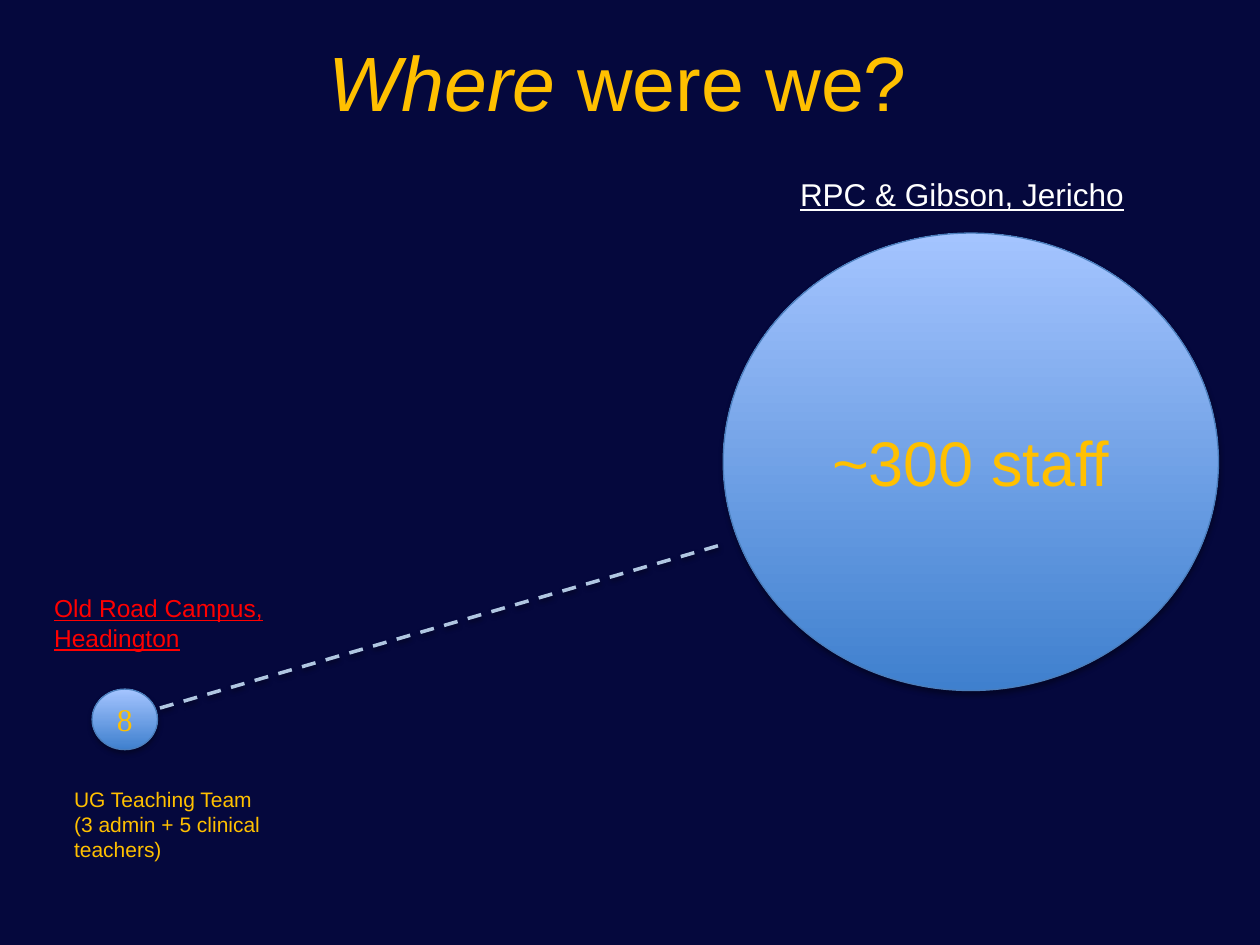
from lxml import etree
from pptx import Presentation
from pptx.dml.color import RGBColor
from pptx.enum.dml import MSO_LINE
from pptx.enum.shapes import MSO_CONNECTOR, MSO_SHAPE
from pptx.enum.text import MSO_ANCHOR, MSO_AUTO_SIZE, PP_ALIGN
from pptx.oxml.ns import qn
from pptx.util import Pt

OVAL, STRAIGHT = MSO_SHAPE.OVAL, MSO_CONNECTOR.STRAIGHT
DASH, MIDDLE = MSO_LINE.DASH, MSO_ANCHOR.MIDDLE
GROW, NO_FIT = MSO_AUTO_SIZE.SHAPE_TO_FIT_TEXT, MSO_AUTO_SIZE.NONE
LEFT, CENTER = PP_ALIGN.LEFT, PP_ALIGN.CENTER

THEME = {
    "background": "05083D", "gold": "FFC000", "white": "FFFFFF", "red": "FF0000",
    "circle_bottom": "3F80CE", "circle_top": "A4C4FF", "outline": "4B7EBC",
    "link": "B0C6E1", "shadow": "000000",
    "sans": "Arial", "serif": "Times New Roman",
    "title": 44, "headline": 36, "label": 18, "campus": 14, "note": 12,
}

TITLE_RUNS = [("Where ", True), ("were we? ", False)]
TITLE_BOX = (35.3, 1.4, 648, 90)
TEAMS = [
    ("8", (52.6, 393.8, 37.4, 34.6), "label", "serif"),
    ("~300 staff", (413.3, 133.2, 283, 261.4), "headline", "sans"),
]
LABELS = [
    ("RPC & Gibson, Jericho", (403.2, 96.5, 293, 29), "label", "white", True, CENTER),
    ("Old Road Campus, Headington", (23.8, 335.5, 170, 41), "campus", "red", True, LEFT),
    ("UG Teaching Team (3 admin + 5 clinical teachers)", (35.3, 445.7, 122.4, 51),
     "note", "gold", False, LEFT),
]
LINK = (91.4, 404.6, 413.3, 311)


def color(name):
    return RGBColor.from_string(THEME[name])


def points(values):
    return [Pt(value) for value in values]


def style(font, size, tint, face="sans"):
    font.name = THEME[face]
    font.size = Pt(THEME[size])
    font.color.rgb = color(tint)


def add_shadow(effects, alpha, distance):
    shadow = etree.SubElement(
        effects, qn("a:outerShdw"), blurRad=str(Pt(3.1)), dist=str(Pt(distance)),
        dir="5400000", rotWithShape="0")
    tint = etree.SubElement(shadow, qn("a:srgbClr"), val=THEME["shadow"])
    etree.SubElement(tint, qn("a:alpha"), val=str(alpha * 1000))


def add_title(slide):
    title = slide.shapes.title
    title.left, title.top, title.width, title.height = points(TITLE_BOX)
    frame = title.text_frame
    frame.vertical_anchor = MIDDLE
    frame.auto_size = NO_FIT
    paragraph = frame.paragraphs[0]
    paragraph.alignment = CENTER
    for words, italic in TITLE_RUNS:
        run = paragraph.add_run()
        run.text = words
        style(run.font, "title", "gold")
        run.font.italic = italic


def add_team(slide, staff, box, size, face):
    circle = slide.shapes.add_shape(OVAL, *points(box))
    circle.fill.gradient()
    circle.fill.gradient_angle = 90
    for stop, tint in zip(circle.fill.gradient_stops, ("circle_bottom", "circle_top")):
        stop.color.rgb = color(tint)
    circle.line.color.rgb = color("outline")
    circle.line.width = Pt(0.75)
    circle.shadow.inherit = False
    add_shadow(circle.element.spPr.find(qn("a:effectLst")), 35, 1.8)
    frame = circle.text_frame
    frame.text = staff
    frame.vertical_anchor = MIDDLE
    frame.paragraphs[0].alignment = CENTER
    style(frame.paragraphs[0].runs[0].font, size, "gold", face)


def add_label(slide, words, box, size, tint, underline, alignment):
    frame = slide.shapes.add_textbox(*points(box)).text_frame
    frame.word_wrap = True
    frame.auto_size = GROW
    frame.text = words
    paragraph = frame.paragraphs[0]
    paragraph.alignment = alignment
    font = paragraph.runs[0].font
    style(font, size, tint)
    font.underline = underline


def add_link(slide):
    link = slide.shapes.add_connector(STRAIGHT, *points(LINK))
    link.line.color.rgb = color("link")
    link.line.width = Pt(2)
    link.line.dash_style = DASH
    effects = etree.SubElement(link.element.spPr, qn("a:effectLst"))
    add_shadow(effects, 38, 1.6)


def main():
    deck = Presentation()
    deck.slide_width, deck.slide_height = Pt(720), Pt(540)
    slide = deck.slides.add_slide(deck.slide_layouts[5])
    slide.background.fill.solid()
    slide.background.fill.fore_color.rgb = color("background")
    add_title(slide)
    for team in TEAMS:
        add_team(slide, *team)
    for label in LABELS:
        add_label(slide, *label)
    add_link(slide)
    deck.save("out.pptx")


if __name__ == "__main__":
    main()
